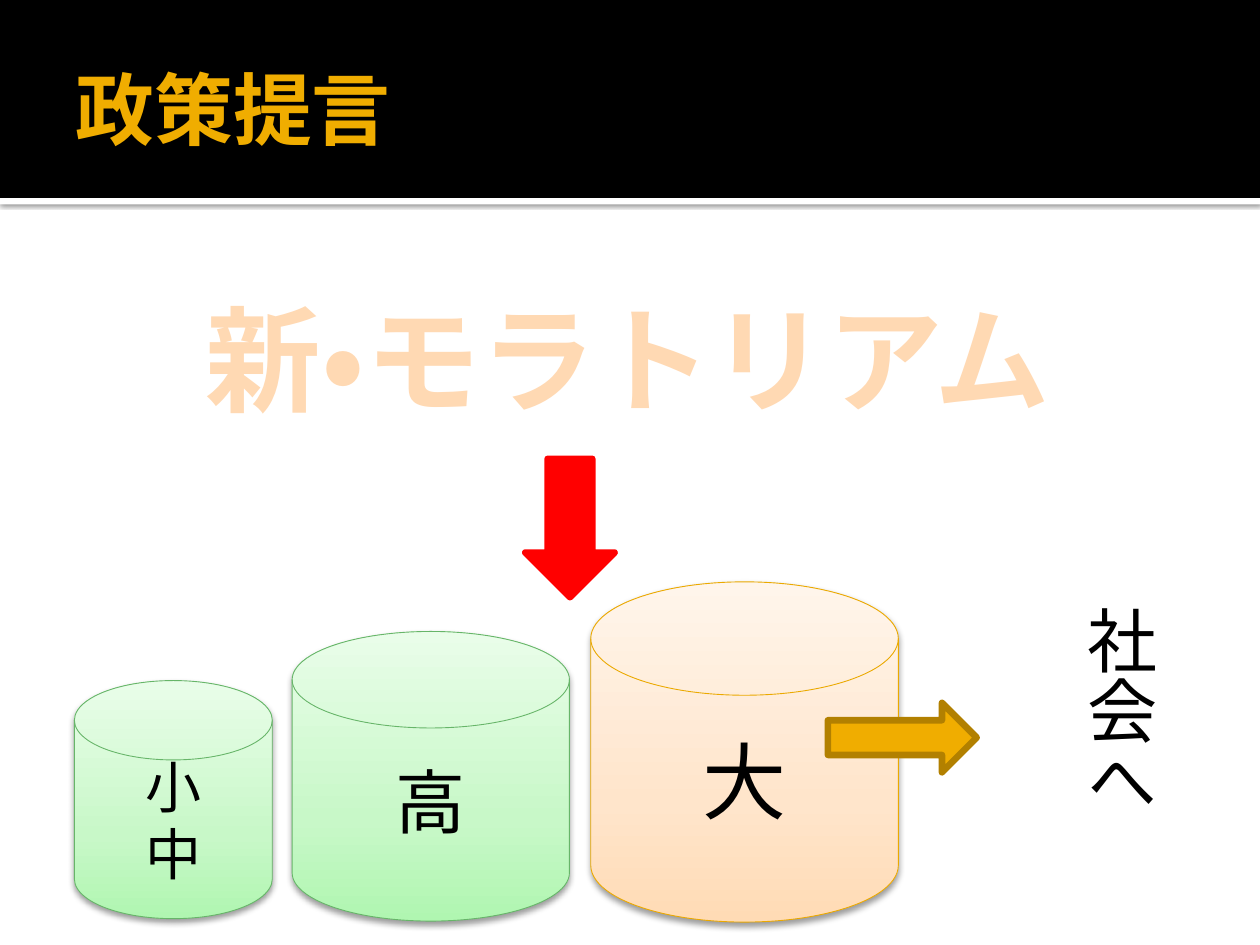
from lxml import etree
from pptx import Presentation
from pptx.dml.color import RGBColor
from pptx.enum.lang import MSO_LANGUAGE_ID
from pptx.enum.shapes import MSO_SHAPE
from pptx.enum.text import MSO_ANCHOR, MSO_AUTO_SIZE, PP_ALIGN
from pptx.oxml import parse_xml
from pptx.oxml.ns import nsdecls, qn
from pptx.util import Cm, Pt

RECTANGLE = MSO_SHAPE.RECTANGLE
DISK = MSO_SHAPE.FLOWCHART_MAGNETIC_DISK
RIGHT_ARROW, DOWN_ARROW = MSO_SHAPE.RIGHT_ARROW, MSO_SHAPE.DOWN_ARROW
LEFT, CENTER = PP_ALIGN.LEFT, PP_ALIGN.CENTER
MIDDLE = MSO_ANCHOR.MIDDLE
NO_FIT = MSO_AUTO_SIZE.NONE
JAPANESE = MSO_LANGUAGE_ID.JAPANESE

BLACK = RGBColor(0x00, 0x00, 0x00)
WHITE = RGBColor(0xFF, 0xFF, 0xFF)
RED = RGBColor(0xFF, 0x00, 0x00)
GOLD = RGBColor(0xF0, 0xAD, 0x00)
DARK_GOLD = RGBColor(0xB2, 0x80, 0x00)
AMBER = RGBColor(0xEB, 0xA9, 0x00)
PEACH = RGBColor(0xFF, 0xD9, 0xB3)
GREEN = RGBColor(0x67, 0xB5, 0x69)
GREEN_SHADES = (RGBColor(0xB0, 0xF6, 0xB1), RGBColor(0xC8, 0xF8, 0xC8),
                RGBColor(0xE9, 0xFD, 0xE9))
PEACH_SHADES = (RGBColor(0xFF, 0xDB, 0xB5), RGBColor(0xFF, 0xE5, 0xCB),
                RGBColor(0xFF, 0xF5, 0xEB))
SHADE_STOPS = (0, 35, 100)


class SlideBuilder:
    font = "Cabin"

    def __init__(self, slide):
        self.slide = slide

    def fill_text(self, frame, lines, size, color=BLACK, bold=False, align=CENTER):
        frame.text = "\n".join(lines)
        for para in frame.paragraphs:
            para.alignment = align
            for span in para.runs:
                span.font.name = self.font
                span.font.size = Pt(size)
                span.font.bold = bold
                span.font.color.rgb = color
                span.font.language_id = JAPANESE

    def title(self, text, place):
        box = self.slide.shapes.title
        box.left, box.top, box.width, box.height = map(Cm, place)
        frame = box.text_frame
        frame.auto_size = NO_FIT
        frame.vertical_anchor = MIDDLE
        frame.margin_right = Cm(0.13)
        self.fill_text(frame, [text], 45, GOLD, True, LEFT)

    def shape(self, kind, place, fill, line=None, weight=3.78):
        shape = self.slide.shapes.add_shape(kind, *map(Cm, place))
        shape.shadow.inherit = False
        shape.fill.solid()
        shape.fill.fore_color.rgb = fill
        if line is None:
            shape.line.fill.background()
        else:
            shape.line.color.rgb = line
            shape.line.width = Pt(weight)
        return shape

    def drop_shadow(self, shape, blur, distance, opacity):
        effects = shape._element.spPr.find(qn("a:effectLst"))
        shadow = etree.SubElement(effects, qn("a:outerShdw"), blurRad=str(Pt(blur)),
                                  dist=str(Pt(distance)), dir="5400000", rotWithShape="0")
        color = etree.SubElement(shadow, qn("a:srgbClr"), val=str(BLACK))
        etree.SubElement(color, qn("a:alpha"), val=str(opacity * 1000))

    def disk(self, lines, place, size, shades, line):
        disk = self.shape(DISK, place, shades[0], line, 0.5)
        stops = "".join(f'<a:gs pos="{stop * 1000}"><a:srgbClr val="{shade}"/></a:gs>'
                        for stop, shade in zip(SHADE_STOPS, shades))
        gradient = parse_xml(f'<a:gradFill {nsdecls("a")}><a:gsLst>{stops}</a:gsLst>'
                             '<a:lin ang="16200000" scaled="1"/></a:gradFill>')
        properties = disk._element.spPr
        properties.replace(properties.find(qn("a:solidFill")), gradient)
        self.drop_shadow(disk, 3.5, 2, 38)
        disk.text_frame.vertical_anchor = MIDDLE
        self.fill_text(disk.text_frame, lines, size)

    def text(self, text, place, size, color=BLACK, bold=False, align=LEFT, vertical=False):
        frame = self.slide.shapes.add_textbox(*map(Cm, place)).text_frame
        frame.word_wrap = True
        if vertical:
            frame._txBody.bodyPr.set("vert", "eaVert")
        else:
            frame.vertical_anchor = MIDDLE
        self.fill_text(frame, [text], size, color, bold, align)


def main():
    deck = Presentation()
    deck.slide_width, deck.slide_height = Cm(25.4), Cm(19.05)
    page = deck.slides.add_slide(deck.slide_layouts[5])
    builder = SlideBuilder(page)

    # Header band, placed behind the title
    rule = builder.shape(RECTANGLE, (0, 3.99, 25.4, 0.13), WHITE)
    builder.drop_shadow(rule, 2.5, 0.8, 60)
    band = builder.shape(RECTANGLE, (0, 0, 25.4, 3.99), BLACK)
    title_element = page.shapes.title._element
    for part in (rule, band):
        title_element.addprevious(part._element)
    builder.title("政策提言", (1.27, 0.43, 22.86, 3.48))

    # Headline
    builder.text("新・モラトリアム", (2.16, 5.6, 21, 3.2), 66, PEACH, True, CENTER)

    # School stages
    builder.disk(["高"], (5.89, 12.73, 5.59, 5.84), 40, GREEN_SHADES, GREEN)
    builder.disk(["小", "中"], (1.5, 13.72, 3.99, 4.8), 32, GREEN_SHADES, GREEN)
    builder.disk(["大"], (11.91, 11.73, 6.2, 6.86), 48, PEACH_SHADES, AMBER)

    # Way out into society, and the point of intervention
    builder.shape(RIGHT_ARROW, (16.69, 14.17, 3, 1.4), GOLD, DARK_GOLD)
    builder.text("社会へ", (21.31, 11.96, 2.24, 5.79), 40, vertical=True)
    builder.shape(DOWN_ARROW, (10.59, 9.25, 1.8, 2.79), RED, RED)

    deck.save("out.pptx")


if __name__ == "__main__":
    main()
